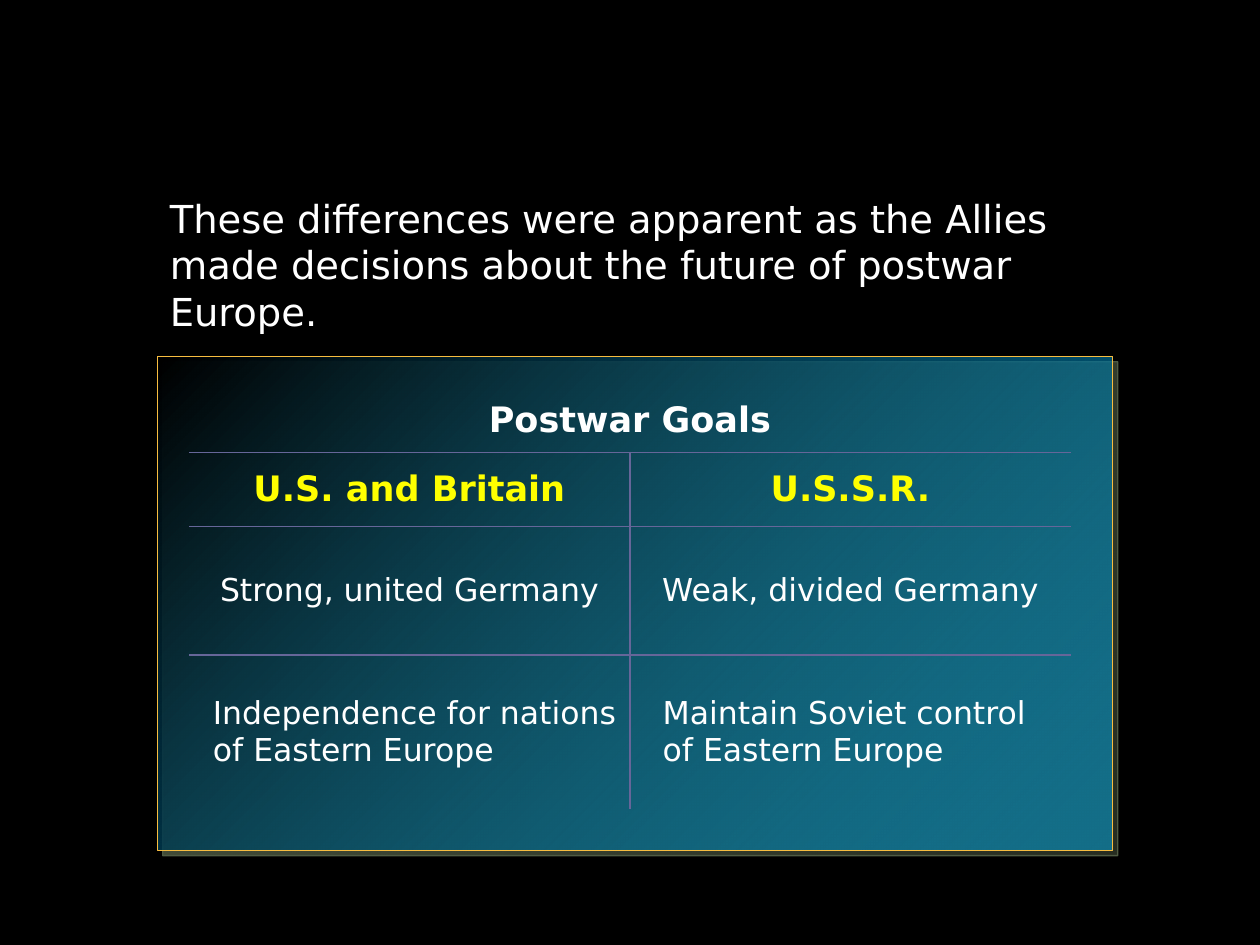
"""Build a slide comparing the postwar goals of the Allies."""
from dataclasses import dataclass

from lxml.etree import SubElement
from pptx import Presentation
from pptx.dml.color import RGBColor
from pptx.enum.shapes import MSO_SHAPE as Shape
from pptx.enum.text import MSO_ANCHOR as Anchor, MSO_AUTO_SIZE as AutoSize, PP_ALIGN as Align
from pptx.oxml import parse_xml
from pptx.oxml.ns import nsdecls, qn
from pptx.slide import Slide
from pptx.table import Table, _Cell as Cell
from pptx.text.text import _Paragraph as Paragraph
from pptx.util import Inches, Pt

BLACK = RGBColor(0x00, 0x00, 0x00)
WHITE = RGBColor(0xFF, 0xFF, 0xFF)
YELLOW = RGBColor(0xFF, 0xFF, 0x00)
BLUE = RGBColor(0x00, 0xB0, 0xF0)
GOLD = RGBColor(0xF7, 0xBD, 0x40)
SAGE = RGBColor(0xAD, 0xC7, 0x93)
RULE = RGBColor(0x66, 0x66, 0x99)
FONT = "DejaVu Sans"
COLUMN_WIDTH = 3.5


@dataclass(frozen=True)
class Style:
    size: int
    color: RGBColor = WHITE
    bold: bool = False


@dataclass(frozen=True)
class Entry:
    text: str
    indent: float | None = None


@dataclass(frozen=True)
class GoalRow:
    height: float
    style: Style
    entries: tuple[Entry, ...]


INTRO = "These differences were apparent as the Allies made decisions about the future of postwar Europe."
GOALS = (
    GoalRow(0.51, Style(20, bold=True), (Entry("Postwar Goals"),)),
    GoalRow(0.59, Style(20, YELLOW, True), (Entry("U.S. and Britain"), Entry("U.S.S.R."))),
    GoalRow(1.02, Style(18), (Entry("Strong, united Germany"), Entry("Weak, divided Germany"))),
    GoalRow(1.22, Style(18), (
        Entry("Independence for nations of Eastern Europe", 0.19),
        Entry("Maintain Soviet control \nof Eastern Europe", 0.26),
    )),
)


def write(para: Paragraph, text: str, style: Style) -> None:
    """Add text to a paragraph, with a line break at each newline."""
    for index, line in enumerate(text.split("\n")):
        if index:
            para.add_line_break()
        span = para.add_run()
        span.text = line
        span.font.name = FONT
        span.font.size = Pt(style.size)
        span.font.bold = style.bold
        span.font.color.rgb = style.color


def add_intro(page: Slide) -> None:
    """Add the introductory sentence."""
    box = page.shapes.add_textbox(Inches(1.25), Inches(1.5), Inches(8), Inches(1.2))
    frame = box.text_frame
    frame.word_wrap = True
    frame.auto_size = AutoSize.SHAPE_TO_FIT_TEXT
    write(frame.paragraphs[0], INTRO, Style(22))


def add_panel(page: Slide) -> None:
    """Add the gradient panel with its offset shadow."""
    panel = page.shapes.add_shape(Shape.RECTANGLE, Inches(1.25), Inches(2.83), Inches(7.58), Inches(3.92))
    panel.line.color.rgb = GOLD
    panel.line.width = Pt(0.75)
    panel.fill.gradient()
    panel.fill.gradient_angle = 135
    for stop, color, position in zip(panel.fill.gradient_stops, (BLUE, BLACK), (0, 1)):
        stop.color.rgb = color
        stop.position = position
    properties = panel._element.spPr
    SubElement(next(properties.iter(qn("a:srgbClr"))), qn("a:alpha"), val="50000")
    panel.shadow.inherit = False
    properties.find(qn("a:effectLst")).append(parse_xml(
        f'<a:outerShdw {nsdecls("a")} blurRad="0" dist="{Pt(4.2)}" dir="2700000" algn="tl" rotWithShape="0">'
        f'<a:srgbClr val="{SAGE}"><a:alpha val="46000"/></a:srgbClr></a:outerShdw>'))


def set_borders(cell: Cell, ruled: set[str]) -> None:
    """Rule the named sides of a cell and clear the others."""
    properties = cell._tc.get_or_add_tcPr()
    for index, side in enumerate("LRTB"):
        fill = f'<a:solidFill><a:srgbClr val="{RULE}"/></a:solidFill>' if side in ruled else "<a:noFill/>"
        properties.insert(index, parse_xml(f'<a:ln{side} {nsdecls("a")} w="{Pt(1)}">{fill}</a:ln{side}>'))


def fill_cell(cell: Cell, entry: Entry, style: Style) -> None:
    """Write one entry into a cell, centred unless it is indented."""
    cell.vertical_anchor = Anchor.MIDDLE
    cell.margin_left = cell.margin_right = cell.margin_top = cell.margin_bottom = 0
    para = cell.text_frame.paragraphs[0]
    para.space_before = Pt(style.size * 0.2)
    if entry.indent is None:
        para.alignment = Align.CENTER
    else:
        para.alignment = Align.LEFT
        para._p.get_or_add_pPr().set("marL", str(Inches(entry.indent)))
    write(para, entry.text, style)


def rule_table(table: Table) -> None:
    """Draw the inner rules and leave the outer edge open."""
    last = len(GOALS) - 1
    for row in range(len(GOALS)):
        for column in range(2):
            ruled = {"T"} if row else set()
            if row < last:
                ruled.add("B")
            if row:
                ruled.add("L" if column else "R")
            cell = table.cell(row, column)
            cell.fill.background()
            set_borders(cell, ruled)


def add_goals(page: Slide) -> None:
    """Add the table of goals."""
    height = sum(goal.height for goal in GOALS)
    frame = page.shapes.add_table(
        len(GOALS), 2, Inches(1.5), Inches(3.08), Inches(2 * COLUMN_WIDTH), Inches(height))
    table = frame.table
    table.first_row = table.horz_banding = False
    for column in table.columns:
        column.width = Inches(COLUMN_WIDTH)
    table.cell(0, 0).merge(table.cell(0, 1))
    for index, goal in enumerate(GOALS):
        table.rows[index].height = Inches(goal.height)
        for column, entry in enumerate(goal.entries):
            fill_cell(table.cell(index, column), entry, goal.style)
    rule_table(table)


def main() -> None:
    """Build and save the deck."""
    deck = Presentation()
    deck.slide_width, deck.slide_height = Inches(10), Inches(7.5)
    page = deck.slides.add_slide(deck.slide_layouts[6])
    page.background.fill.solid()
    page.background.fill.fore_color.rgb = BLACK
    add_intro(page)
    add_panel(page)
    add_goals(page)
    deck.save("out.pptx")


if __name__ == "__main__":
    main()
